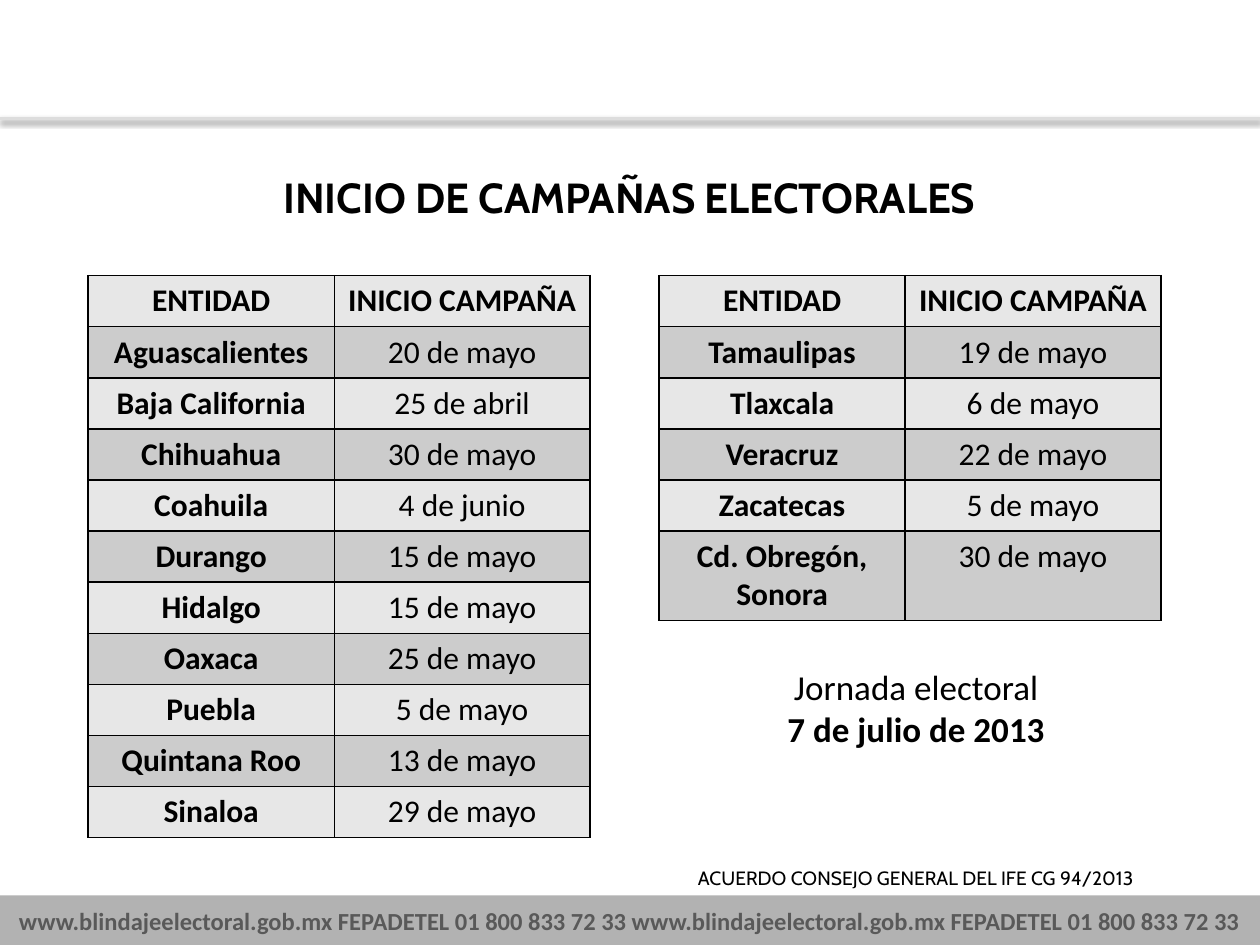
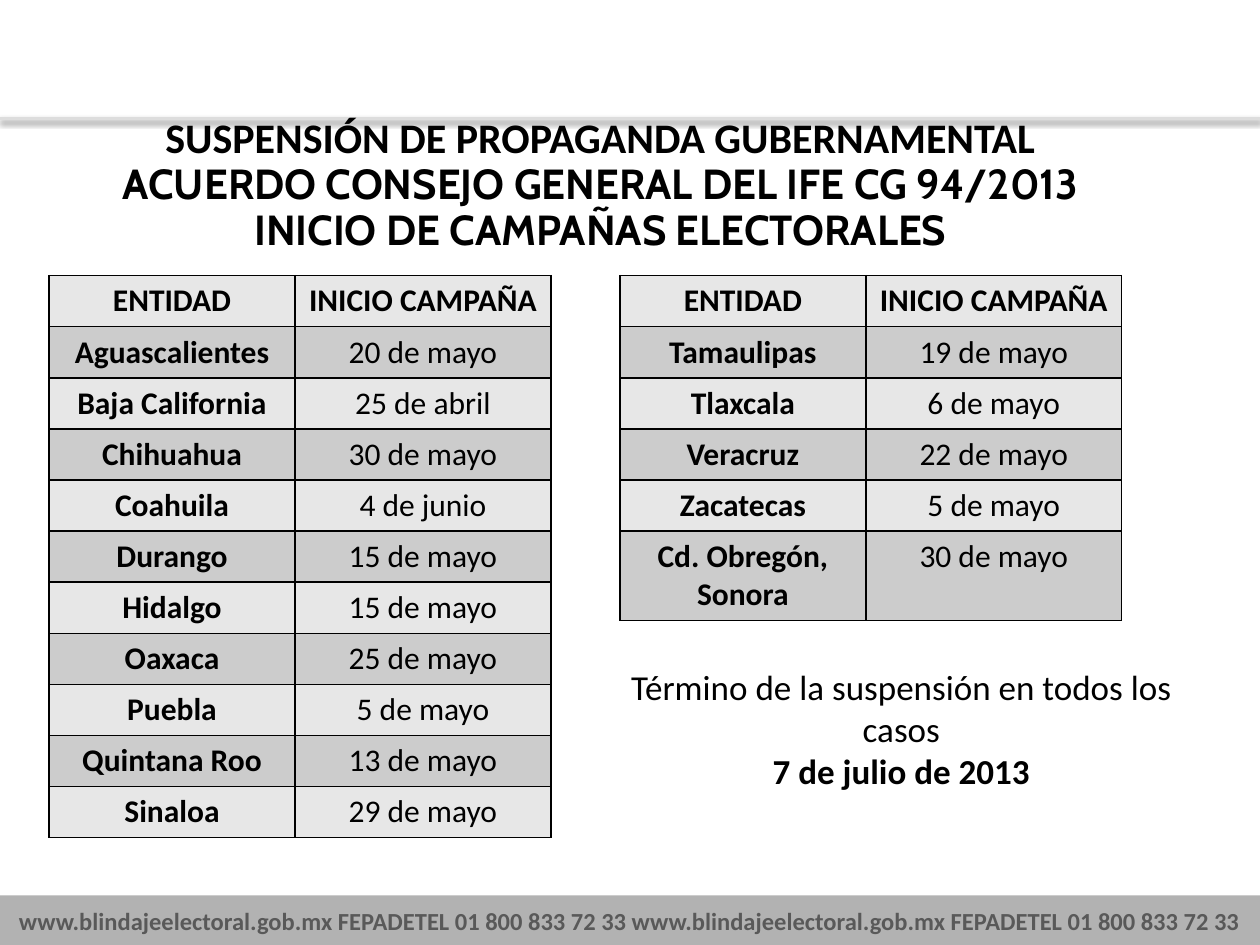
from lxml import etree
from pptx import Presentation
from pptx.dml.color import RGBColor
from pptx.enum.shapes import MSO_CONNECTOR as Link, MSO_SHAPE as Form
from pptx.enum.text import MSO_ANCHOR as Anchor, PP_ALIGN as Align
from pptx.oxml import parse_xml
from pptx.oxml.ns import nsdecls, qn
from pptx.util import Pt

BLACK = RGBColor(0x00, 0x00, 0x00)
RULE = RGBColor(0xDD, 0xDD, 0xDD)
BAND = RGBColor(0xB2, 0xB2, 0xB2)
GREY = RGBColor(0x59, 0x59, 0x59)
LIGHT = RGBColor(0xE7, 0xE7, 0xE7)
DARK = RGBColor(0xCC, 0xCC, 0xCC)
BODY, HEAD = "Calibri", "Cabin"

WIDTH, HEIGHT = 720, 540
RULE_Y, BAND_Y, BAND_H = 67.7, 511.7, 28.8
TABLE_Y, ROW_H, TALL_H = 157.5, 29.2, 51.1
COLS = (140.6, 146.2)
STEP = 326.2  # from the left table to the right one

FOOTER = ("www.blindajeelectoral.gob.mx FEPADETEL 01 800 833 72 33 "
          "www.blindajeelectoral.gob.mx FEPADETEL 01 800 833 72 33")
AGREED = "ACUERDO CONSEJO GENERAL DEL IFE CG 94/2013"
STARTS = "INICIO DE CAMPAÑAS ELECTORALES"
VOTE_DAY = "7 de julio de 2013"
COL_HEADS = ("ENTIDAD", "INICIO CAMPAÑA")
LEFT = (
    ("Aguascalientes", "20 de mayo"),
    ("Baja California", "25 de abril"),
    ("Chihuahua", "30 de mayo"),
    ("Coahuila", "4 de junio"),
    ("Durango", "15 de mayo"),
    ("Hidalgo", "15 de mayo"),
    ("Oaxaca", "25 de mayo"),
    ("Puebla", "5 de mayo"),
    ("Quintana Roo", "13 de mayo"),
    ("Sinaloa", "29 de mayo"),
)
RIGHT = (
    ("Tamaulipas", "19 de mayo"),
    ("Tlaxcala", "6 de mayo"),
    ("Veracruz", "22 de mayo"),
    ("Zacatecas", "5 de mayo"),
    ("Cd. Obregón, Sonora", "30 de mayo"),
)


def style(para, size, bold=False, font=BODY, color=BLACK):
    para.alignment = Align.CENTER
    if font == HEAD:
        para.line_spacing = 0.93
    for run in para.runs:
        face = run.font
        face.size, face.bold, face.name = Pt(size), bold, font
        face.color.rgb = color


def add_text(slide, box, lines):
    """Add a centred text box; each line is (text, size, bold, font)."""
    frame = slide.shapes.add_textbox(*map(Pt, box)).text_frame
    frame.word_wrap = True
    frame.text = "\n".join(line[0] for line in lines)
    for para, line in zip(frame.paragraphs, lines):
        style(para, *line[1:])


def add_rule(slide):
    """Draw the line under the header, with its soft shadow."""
    rule = slide.shapes.add_connector(
        Link.STRAIGHT, 0, Pt(RULE_Y), Pt(WIDTH), Pt(RULE_Y))
    rule.line.color.rgb = RULE
    rule.line.width = Pt(2)
    glow = parse_xml(
        f'<a:effectLst {nsdecls("a")}>'
        f'<a:outerShdw blurRad="{Pt(3.1)}" dist="{Pt(1.6)}" dir="5400000" '
        'rotWithShape="0"><a:srgbClr val="000000"><a:alpha val="38000"/>'
        '</a:srgbClr></a:outerShdw></a:effectLst>')
    rule._element.spPr.append(glow)


def add_footer(slide):
    band = slide.shapes.add_shape(
        Form.RECTANGLE, 0, Pt(BAND_Y), Pt(WIDTH), Pt(BAND_H))
    band.shadow.inherit = False
    band.fill.solid()
    band.fill.fore_color.rgb = BAND
    band.line.fill.background()
    frame = band.text_frame
    frame.margin_left = frame.margin_right = 0
    frame.vertical_anchor = Anchor.MIDDLE
    frame.text = FOOTER
    style(frame.paragraphs[0], 14, True, color=GREY)


def add_edges(cell):
    props = cell._tc.get_or_add_tcPr()
    for side in ("lnL", "lnR", "lnT", "lnB"):
        edge = etree.SubElement(props, qn(f"a:{side}"), w=str(Pt(1)))
        fill = etree.SubElement(edge, qn("a:solidFill"))
        etree.SubElement(fill, qn("a:srgbClr"), val=str(BLACK))


def add_dates(slide, left, dates, last=ROW_H):
    """Add a table of start dates; last is the height of its last row."""
    rows = (COL_HEADS, *dates)
    high = ROW_H * len(dates) + last
    table = slide.shapes.add_table(
        len(rows), len(COLS), Pt(left), Pt(TABLE_Y),
        Pt(sum(COLS)), Pt(high)).table
    table.first_row = table.horz_banding = False
    for col, wide in zip(table.columns, COLS):
        col.width = Pt(wide)
    for row in table.rows:
        row.height = Pt(ROW_H)
    table.rows[len(dates)].height = Pt(last)
    for r, row in enumerate(rows):
        for c, text in enumerate(row):
            cell = table.cell(r, c)
            add_edges(cell)
            cell.fill.solid()
            cell.fill.fore_color.rgb = DARK if r % 2 else LIGHT
            cell.text = text
            style(cell.text_frame.paragraphs[0], 18, r == 0 or c == 0)


def add_page(deck, box, title, left):
    """Add a slide with rule, footer, title and the two tables of dates."""
    slide = deck.slides.add_slide(deck.slide_layouts[6])
    add_rule(slide)
    add_footer(slide)
    add_text(slide, box, title)
    add_dates(slide, left, LEFT)
    add_dates(slide, left + STEP, RIGHT, TALL_H)
    return slide


def add_close(slide, box, lead):
    """Add the closing note: a lead line over the voting day."""
    add_text(slide, box, [(lead, 20), (VOTE_DAY, 20, True)])


def main():
    deck = Presentation()
    deck.slide_width, deck.slide_height = Pt(WIDTH), Pt(HEIGHT)

    slide = add_page(deck, (16.6, 97, 686, 36),
                     [(STARTS, 24, True, HEAD)], 50.4)
    add_close(slide, (365.8, 376.6, 315.4, 55.4), "Jornada electoral")
    add_text(slide, (343.4, 492.5, 360, 19.4), [(AGREED, 11, False, HEAD)])

    title = [("SUSPENSIÓN DE PROPAGANDA GUBERNAMENTAL", 24, True),
             (AGREED, 24, True, HEAD), (STARTS, 24, True, HEAD)]
    slide = add_page(deck, (0, 60, 686, 92), title, 28)
    add_close(slide, (343.4, 376.6, 343.4, 80),
              "Término de la suspensión en todos los casos")

    deck.save("out.pptx")


if __name__ == "__main__":
    main()
